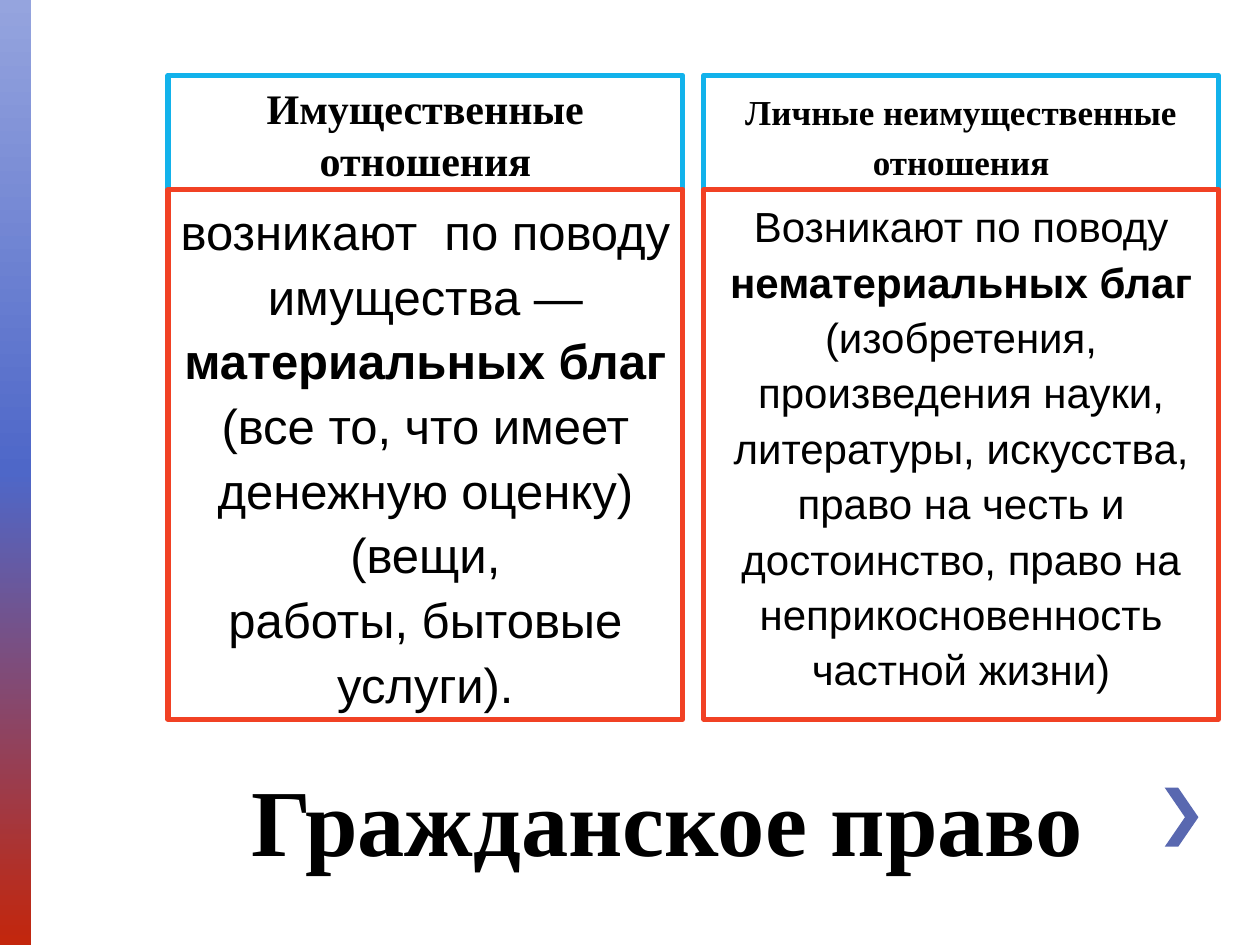
import copy

import pptx
import pptx.dml.color
import pptx.enum.shapes
import pptx.enum.text
import pptx.util

Cm = pptx.util.Cm
Pt = pptx.util.Pt
RGB = pptx.dml.color.RGBColor
Anchor = pptx.enum.text.MSO_ANCHOR
RECT = pptx.enum.shapes.MSO_SHAPE.RECTANGLE

BLACK = RGB(0x00, 0x00, 0x00)
CYAN = RGB(0x12, 0xB2, 0xEB)
RED = RGB(0xF1, 0x41, 0x24)
MARK = RGB(0x59, 0x68, 0xB0)
FADE = [(0, RGB(0x95, 0xA4, 0xDE)), (0.5, RGB(0x4E, 0x67, 0xC8)),
        (1, RGB(0xC3, 0x26, 0x0C))]

SERIF = "Times New Roman"
SANS = "Arial"

COLUMNS = [
    ("Имущественные отношения", 24, 1.05, 28, [
        [("возникают  по поводу имущества — ", False),
         ("материальных благ ", True),
         ("(все то, что имеет денежную оценку)", False)],
        [("(вещи,", False)],
        [("работы, бытовые услуги).", False)]]),
    ("Личные неимущественные отношения", 20, 1.2, 24, [
        [("Возникают по поводу ", False),
         ("нематериальных благ ", True),
         ("(изобретения, произведения науки, литературы, искусства, "
          "право на честь и достоинство, право на неприкосновенность "
          "частной жизни)", False)]]),
]


def write(frame, paras, font, size, space, anchor):
    """Fill a text frame with centred paragraphs of (text, bold) runs."""
    frame.word_wrap = True
    frame.vertical_anchor = anchor
    for index, parts in enumerate(paras):
        para = frame.paragraphs[0] if index == 0 else frame.add_paragraph()
        para.alignment = pptx.enum.text.PP_ALIGN.CENTER
        para.line_spacing = space
        for text, bold in parts:
            run = para.add_run()
            run.text = text
            run.font.name = font
            run.font.size = Pt(size)
            run.font.bold = bold
            run.font.color.rgb = BLACK


def add_frame(slide, left, top, width, height, color):
    """Add an outlined box without fill and return its text frame."""
    box = slide.shapes.add_shape(RECT, Cm(left), Cm(top), Cm(width), Cm(height))
    box.shadow.inherit = False
    box.fill.background()
    box.line.color.rgb = color
    box.line.width = Pt(3)
    return box.text_frame


def add_column(slide, left, top, width, height, column):
    """Stack a heading box on a body box."""
    title, size, space, small, paras = column
    head = 2.3
    frame = add_frame(slide, left, top, width, head, CYAN)
    write(frame, [[(title, True)]], SERIF, size, space, Anchor.MIDDLE)
    frame = add_frame(slide, left, top + head, width, height - head, RED)
    write(frame, paras, SANS, small, 1.1, Anchor.TOP)


def add_band(slide, left, top, width, height):
    """Add the vertical gradient band."""
    band = slide.shapes.add_shape(RECT, Cm(left), Cm(top), Cm(width), Cm(height))
    band.shadow.inherit = False
    band.line.fill.background()
    band.fill.gradient()
    band.fill.gradient_angle = 270
    stops = band.fill._fill._gradFill.gsLst
    stops.append(copy.deepcopy(stops[0]))
    for stop, (place, color) in zip(band.fill.gradient_stops, FADE):
        stop.position = place
        stop.color.rgb = color


def add_mark(slide, left, top, width, height):
    """Add the chevron beside the title."""
    thick = 0.4 * width
    spots = [(thick, 0), (0, 0), (width - thick, height / 2), (0, height),
             (thick, height), (width, height / 2)]
    points = [(Cm(left + x), Cm(top + y)) for x, y in spots]
    build = slide.shapes.build_freeform(*points[0])
    build.add_line_segments(points[1:], close=True)
    mark = build.convert_to_shape()
    mark.shadow.inherit = False
    mark.fill.solid()
    mark.fill.fore_color.rgb = MARK
    mark.line.fill.background()


def add_title(slide, left, top, width, height):
    """Add the slide title at the foot of its box."""
    box = slide.shapes.add_textbox(Cm(left), Cm(top), Cm(width), Cm(height))
    write(box.text_frame, [[("Гражданское право", True)]], SERIF, 54, 1,
          Anchor.BOTTOM)


def main():
    """Build and save the slide."""
    deck = pptx.Presentation()
    deck.slide_width = Cm(25.4)
    deck.slide_height = Cm(19.05)
    slide = deck.slides.add_slide(deck.slide_layouts[6])
    add_band(slide, 0, 0, 0.63, 19.05)
    add_mark(slide, 23.48, 15.88, 0.68, 1.19)
    add_title(slide, 3.39, 14.6, 20.11, 3.18)
    left, width, gap = 3.39, 10.37, 0.43
    for index, column in enumerate(COLUMNS):
        add_column(slide, left + index * (width + gap), 1.52, width, 12.98,
                   column)
    deck.save("out.pptx")


if __name__ == "__main__":
    main()
